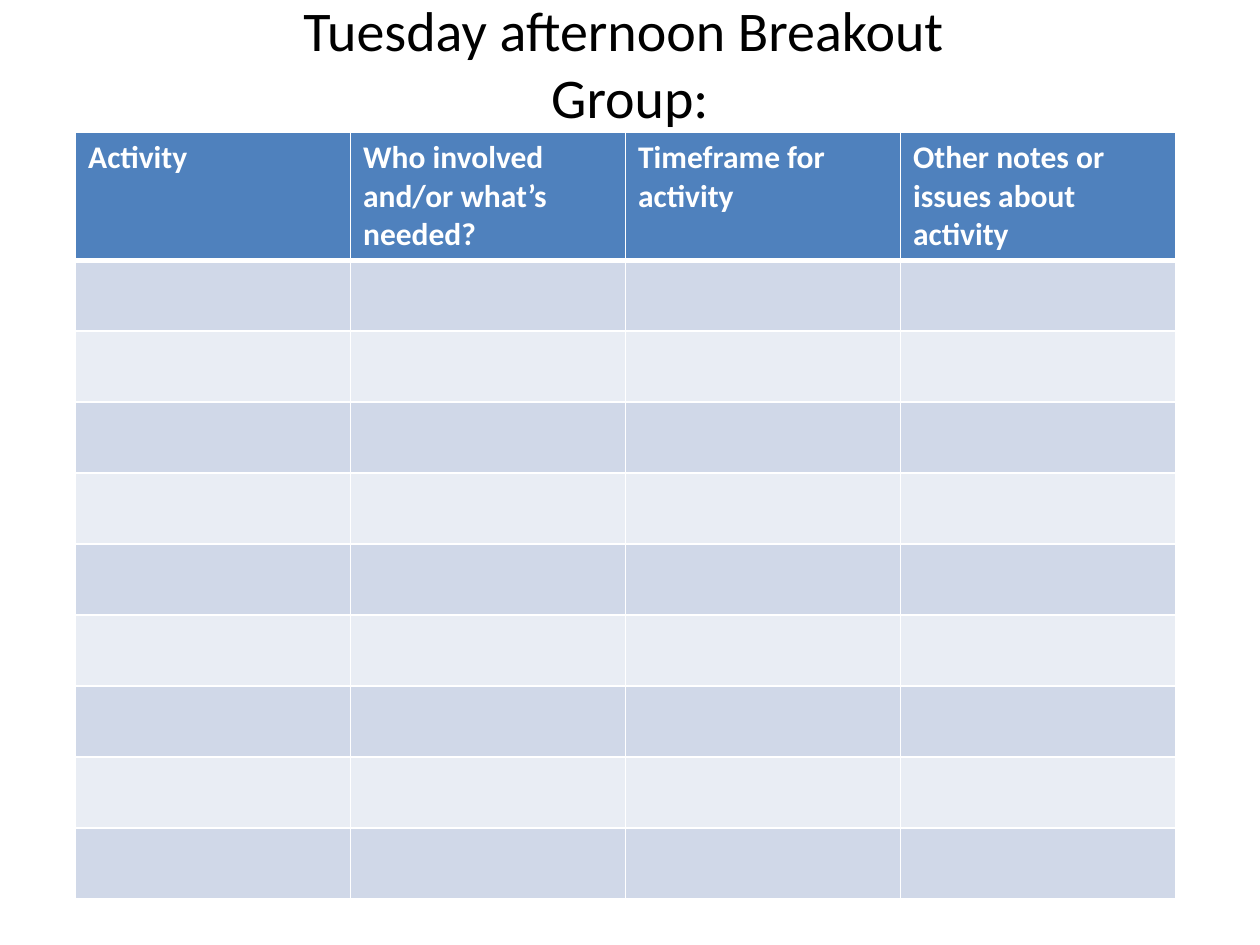
import dataclasses

import lxml.etree
import pptx
import pptx.dml.color
import pptx.enum.text
import pptx.oxml.ns
import pptx.util

Inches = pptx.util.Inches
Pt = pptx.util.Pt

FONT = "Calibri"
COLORS = {
    "ink": "000000",
    "white": "FFFFFF",
    "head": "4F81BD",
    "odd": "D0D8E8",
    "even": "E9EDF4",
}
HEADS = [
    "Activity",
    "Who involved and/or what’s needed?",
    "Timeframe for activity",
    "Other notes or issues about activity",
]


@dataclasses.dataclass
class Grid:
    left: float = 0.6
    top: float = 1.05
    width: float = 8.73
    height: float = 6.08
    head: float = 0.73
    row: float = 0.563
    blanks: int = 9


def color(name: str) -> pptx.dml.color.RGBColor:
    return pptx.dml.color.RGBColor.from_string(COLORS[name])


def style(par, size: int, ink: str, bold: bool = False) -> None:
    for run in par.runs:
        run.font.name = FONT
        run.font.size = Pt(size)
        run.font.bold = bold
        run.font.color.rgb = color(ink)


def border(cell, base: int) -> None:
    """Draw white cell edges, with the bottom one base points wide."""
    props = cell._tc.get_or_add_tcPr()
    qn = pptx.oxml.ns.qn
    for i, (side, wide) in enumerate(zip("LRTB", (1, 1, 1, base))):
        line = lxml.etree.Element(qn(f"a:ln{side}"), w=str(Pt(wide)))
        fill = lxml.etree.SubElement(line, qn("a:solidFill"))
        lxml.etree.SubElement(fill, qn("a:srgbClr"), val=COLORS["white"])
        props.insert(i, line)


def add_title(slide, text: str) -> None:
    title = slide.shapes.title
    title.left, title.top = Inches(0), Inches(0.04)
    title.width, title.height = Inches(10), Inches(0.91)
    frame = title.text_frame
    frame.text = text
    frame.word_wrap = True
    frame.auto_size = pptx.enum.text.MSO_AUTO_SIZE.NONE
    frame.vertical_anchor = pptx.enum.text.MSO_ANCHOR.MIDDLE
    frame.paragraphs[0].alignment = pptx.enum.text.PP_ALIGN.CENTER
    style(frame.paragraphs[0], 32, "ink")


def add_plan(slide, grid: Grid) -> None:
    frame = slide.shapes.add_table(
        grid.blanks + 1, len(HEADS), Inches(grid.left), Inches(grid.top),
        Inches(grid.width), Inches(grid.height))
    table = frame.table
    for r, row in enumerate(table.rows):
        row.height = Inches(grid.row if r else grid.head)
        shade = ("odd" if r % 2 else "even") if r else "head"
        for c, cell in enumerate(row.cells):
            cell.fill.solid()
            cell.fill.fore_color.rgb = color(shade)
            border(cell, 1 if r else 3)
            if r == 0:
                cell.text_frame.text = HEADS[c]
                style(cell.text_frame.paragraphs[0], 18, "white", True)
    frame.height = Inches(grid.height)


def main() -> None:
    deck = pptx.Presentation()
    deck.slide_width, deck.slide_height = Inches(10), Inches(7.5)
    slide = deck.slides.add_slide(deck.slide_layouts.get_by_name("Title Only"))
    add_title(slide, "Tuesday afternoon Breakout \vGroup:")
    add_plan(slide, Grid())
    deck.save("out.pptx")


if __name__ == "__main__":
    main()
